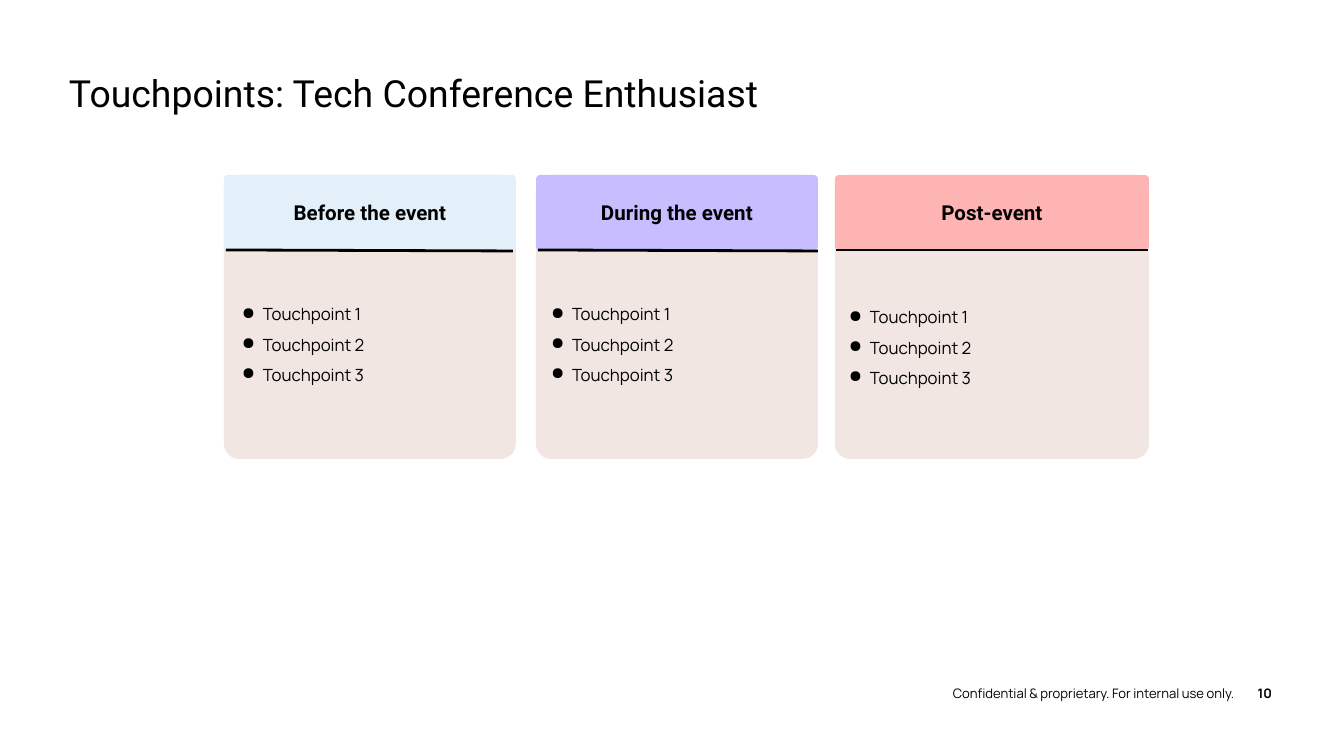
from lxml import etree
from pptx import Presentation
from pptx.dml.color import RGBColor
from pptx.enum.shapes import MSO_CONNECTOR, MSO_SHAPE
from pptx.enum.text import MSO_ANCHOR, MSO_AUTO_SIZE, PP_ALIGN
from pptx.oxml.ns import qn
from pptx.util import Pt

TITLE_ONLY = 5
ROUNDED = MSO_SHAPE.ROUNDED_RECTANGLE
STRAIGHT = MSO_CONNECTOR.STRAIGHT
LEFT, CENTER, RIGHT = PP_ALIGN.LEFT, PP_ALIGN.CENTER, PP_ALIGN.RIGHT
TOP, MIDDLE = MSO_ANCHOR.TOP, MSO_ANCHOR.MIDDLE

COLORS = {
    "text": "000000",
    "body": "F2E6E3",
    "before": "E3F0FA",
    "during": "C8BEFF",
    "post": "FFB4B4",
}
HEADING_FONT, BODY_FONT = "Roboto", "Manrope"

TITLE = "Touchpoints: Tech Conference Enthusiast"
FOOTER = "Confidential & proprietary. For internal use only."
PAGE_NUMBER = "10"
TOUCHPOINTS = ["Touchpoint 1", "Touchpoint 2", "Touchpoint 3"]
# heading, colour, left, width, rule start, rule end, rule drop, list left, list top
CARDS = [
    ("Before the event", "before", 224, 292, 226, 513, 1, 229, 250),
    ("During the event", "during", 536, 282, 538, 818, 1, 538, 250),
    ("Post-event", "post", 835, 314, 836, 1148, 0, 836, 253),
]
CARD_TOP, CARD_HEIGHT, HEADER_HEIGHT = 175, 284, 75
RULE_Y = CARD_TOP + HEADER_HEIGHT
LIST_HEIGHT, LIST_INSET, LIST_TOP_INSET, BULLET_INDENT = 160, 13, 44, 21
CORNER = 0.054


def px(length):
    return round(length * 914400 / 134.4)


def box(left, top, width, height):
    return px(left), px(top), px(width), px(height)


def color(name):
    return RGBColor.from_string(COLORS[name])


def write(shape, text, size, font, bold=False, align=LEFT, anchor=TOP, inset=0):
    """Fill a shape with text, one paragraph per line, in one format."""
    frame = shape.text_frame
    frame.text = text
    frame.word_wrap = True
    frame.auto_size = MSO_AUTO_SIZE.NONE
    frame.vertical_anchor = anchor
    frame.margin_left = frame.margin_right = px(inset)
    frame.margin_top = frame.margin_bottom = px(inset)
    for paragraph in frame.paragraphs:
        paragraph.alignment = align
        for run in paragraph.runs:
            run.font.size = Pt(size)
            run.font.name = font
            run.font.bold = bold
            run.font.color.rgb = color("text")
    return frame


def add_panel(slide, left, width, height, fill):
    panel = slide.shapes.add_shape(ROUNDED, *box(left, CARD_TOP, width, height))
    panel.adjustments[0] = CORNER
    panel.shadow.inherit = False
    panel.fill.solid()
    panel.fill.fore_color.rgb = color(fill)
    panel.line.fill.background()
    return panel


def add_rule(slide, start, end, drop):
    rule = slide.shapes.add_connector(
        STRAIGHT, px(start), px(RULE_Y), px(end), px(RULE_Y + drop))
    rule.line.color.rgb = color("text")
    rule.line.width = Pt(1.5)
    etree.SubElement(rule._element.spPr, qn("a:effectLst"))


def add_list(slide, left, top, width):
    text_box = slide.shapes.add_textbox(*box(left, top, width, LIST_HEIGHT))
    frame = write(text_box, "\n".join(TOUCHPOINTS), 9, BODY_FONT, inset=LIST_INSET)
    frame.margin_top = px(LIST_TOP_INSET)
    for paragraph in frame.paragraphs:
        paragraph.line_spacing = 1.5
        properties = paragraph._p.get_or_add_pPr()
        properties.set("marL", str(px(BULLET_INDENT)))
        properties.set("indent", str(-px(BULLET_INDENT)))
        etree.SubElement(properties, qn("a:buChar")).set("char", "●")


def add_card(slide, heading, fill, left, width, start, end, drop, list_left, list_top):
    add_panel(slide, left, width, CARD_HEIGHT, "body")
    header = add_panel(slide, left, width, HEADER_HEIGHT, fill)
    write(header, heading, 11, HEADING_FONT, True, CENTER, MIDDLE, 13)
    add_rule(slide, start, end, drop)
    add_list(slide, list_left, list_top, width)


def main():
    presentation = Presentation()
    presentation.slide_width, presentation.slide_height = px(1344), px(756)
    slide = presentation.slides.add_slide(presentation.slide_layouts[TITLE_ONLY])

    title = slide.shapes.title
    title.left, title.top, title.width, title.height = box(69, 70, 880, 59)
    write(title, TITLE, 20, HEADING_FONT)

    for card in CARDS:
        add_card(slide, *card)

    footer = slide.shapes.add_textbox(*box(953, 685, 289, 16))
    write(footer, FOOTER, 7, BODY_FONT)
    number = slide.shapes.add_textbox(*box(1252, 685, 20, 16))
    write(number, PAGE_NUMBER, 7, BODY_FONT, True, RIGHT)

    presentation.save("out.pptx")


if __name__ == "__main__":
    main()
